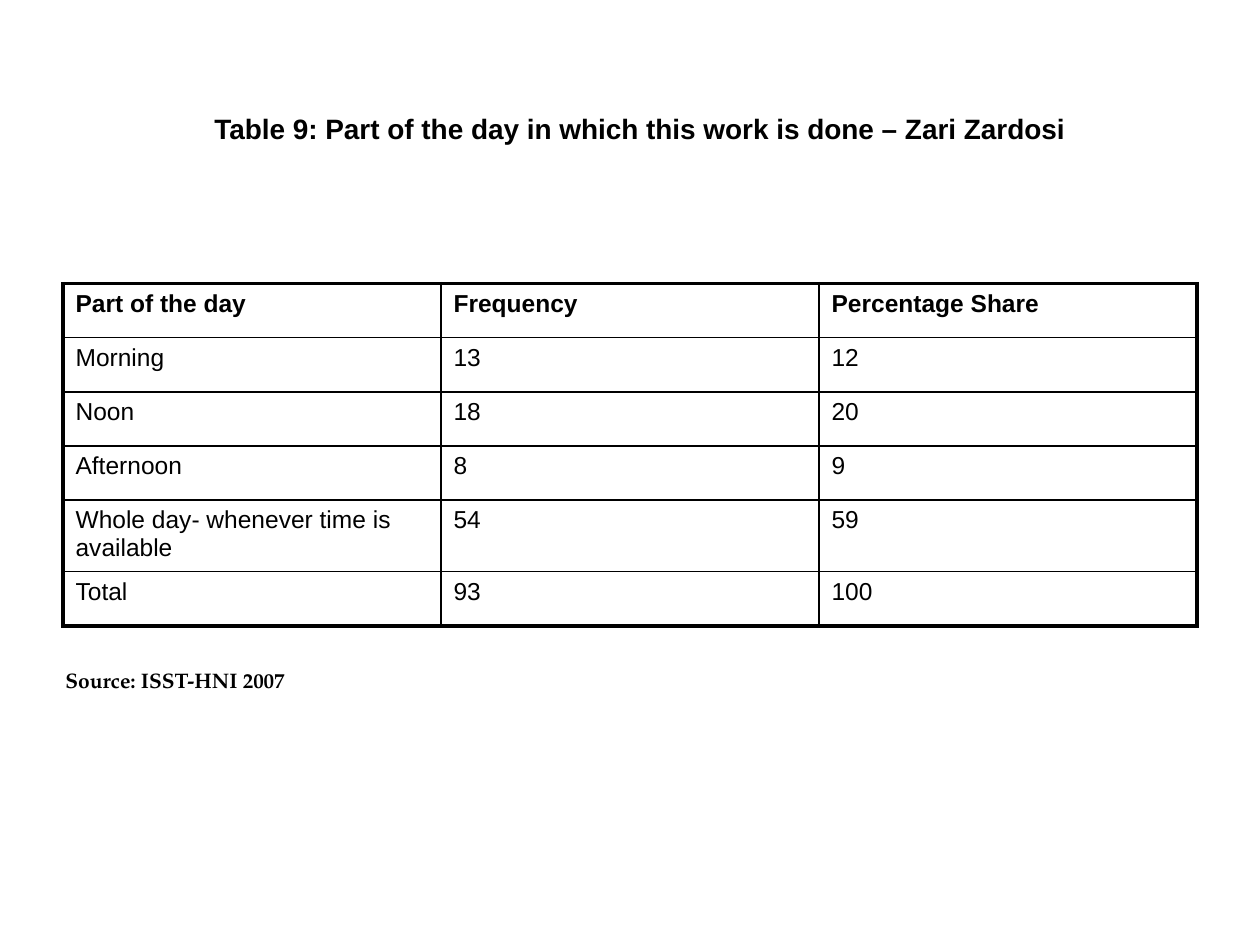
from dataclasses import dataclass

import pptx
import pptx.dml.color
import pptx.enum.text
import pptx.oxml
import pptx.oxml.ns
import pptx.util
from pptx.util import Inches


@dataclass(frozen=True)
class Theme:
    """Colours, fonts and sizes used on the slide."""
    ink: str = "000000"
    sans: str = "Arial"
    serif: str = "TeX Gyre Pagella"
    title_size: int = 16
    table_size: int = 14
    source_size: int = 12
    inner_line: float = 1
    outer_line: float = 2.25


THEME = Theme()
TITLE = "Table 9: Part of the day in which this work is done – Zari Zardosi"
SOURCE = "Source: ISST-HNI 2007"
ROWS = [
    ("Part of the day", "Frequency", "Percentage Share"),
    ("Morning", "13", "12"),
    ("Noon", "18", "20"),
    ("Afternoon", "8", "9"),
    ("Whole day- whenever time is available", "54", "59"),
    ("Total", "93", "100"),
]


def style_paragraph(paragraph, font_name, size, bold):
    """Set the font of a whole paragraph."""
    font = paragraph.font
    font.name = font_name
    font.size = pptx.util.Pt(size)
    font.bold = bold
    font.color.rgb = pptx.dml.color.RGBColor.from_string(THEME.ink)


def set_borders(cell, widths):
    """Draw the cell's borders from a mapping of side tag to width in points."""
    properties = cell._tc.get_or_add_tcPr()
    for position, (side, width) in enumerate(widths.items()):
        line = pptx.oxml.parse_xml(
            f'<a:{side} {pptx.oxml.ns.nsdecls("a")} w="{pptx.util.Pt(width)}">'
            f'<a:solidFill><a:srgbClr val="{THEME.ink}"/></a:solidFill></a:{side}>'
        )
        properties.insert(position, line)


def add_label(slide, box, text, font_name, size, wrap, alignment):
    """Add a bold, vertically centred line of text in the box."""
    frame = slide.shapes.add_textbox(*box).text_frame
    frame.word_wrap = wrap
    frame.vertical_anchor = pptx.enum.text.MSO_ANCHOR.MIDDLE
    paragraph = frame.paragraphs[0]
    paragraph.text = text
    paragraph.alignment = alignment
    style_paragraph(paragraph, font_name, size, True)


def add_frequency_table(slide, box, rows):
    """Add the frequency table with a heavy frame and thin inner lines."""
    last_row, last_column = len(rows) - 1, len(rows[0]) - 1
    table = slide.shapes.add_table(len(rows), len(rows[0]), *box).table
    table.first_row = table.horz_banding = False
    for row, values in enumerate(rows):
        for column, value in enumerate(values):
            cell = table.cell(row, column)
            cell.text = value
            cell.fill.background()
            style_paragraph(cell.text_frame.paragraphs[0], THEME.sans,
                            THEME.table_size, row == 0)
            on_frame = {
                "lnL": column == 0,
                "lnR": column == last_column,
                "lnT": row == 0,
                "lnB": row == last_row,
            }
            set_borders(cell, {
                side: THEME.outer_line if outer else THEME.inner_line
                for side, outer in on_frame.items()
            })


def build_slide(presentation):
    """Place the title, table and source line on a blank slide."""
    slide = presentation.slides.add_slide(presentation.slide_layouts[6])
    align = pptx.enum.text.PP_ALIGN
    add_label(slide, (Inches(0.58), Inches(0.39), Inches(9), Inches(1.25)),
              TITLE, THEME.sans, THEME.title_size, True, align.CENTER)
    add_frequency_table(
        slide, (Inches(0.5), Inches(2.25), Inches(9), Inches(0.43) * len(ROWS)), ROWS)
    add_label(slide, (Inches(0.42), Inches(5.25), Inches(1.95), Inches(0.3)),
              SOURCE, THEME.serif, THEME.source_size, False, align.LEFT)


def main():
    """Build and save the presentation."""
    presentation = pptx.Presentation()
    presentation.slide_width = Inches(10)
    presentation.slide_height = Inches(7.5)
    build_slide(presentation)
    presentation.save("out.pptx")


if __name__ == "__main__":
    main()
